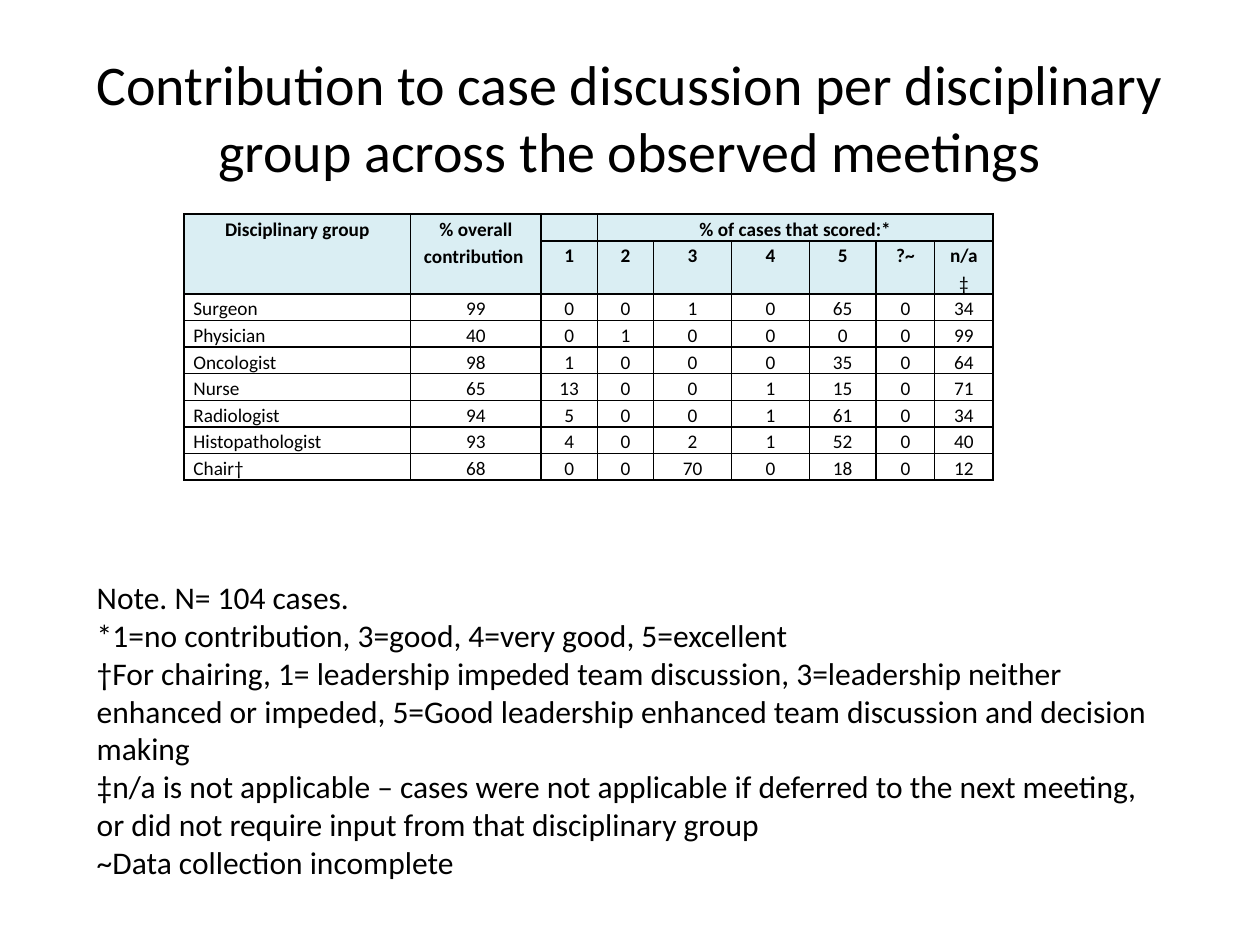
import lxml.etree
import pptx
import pptx.dml.color
import pptx.enum.text
import pptx.oxml.ns
import pptx.util

Pt = pptx.util.Pt
ALIGN = pptx.enum.text.PP_ALIGN
ANCHOR = pptx.enum.text.MSO_ANCHOR
qn = pptx.oxml.ns.qn

BLACK = pptx.dml.color.RGBColor(0x00, 0x00, 0x00)
HEADER_BLUE = pptx.dml.color.RGBColor(0xDA, 0xEE, 0xF3)

ROW_HEIGHT = 15.2
COLUMN_WIDTHS = [129.6, 74.5, 32.2, 32.2, 44.5, 44.5, 38.2, 33.4, 33.4]
CELL_FORMAT = {
    "margin_left": Pt(5.4),
    "margin_right": Pt(5.4),
    "margin_top": 0,
    "margin_bottom": 0,
}

HEADER = [
    ["Disciplinary group", "% overall contribution ", "", "% of cases that scored:*",
     "", "", "", "", ""],
    ["", "", "1", "2", "3", "4", "5", "?~", "n/a"],
]
SCORES = [
    ["Surgeon", 99, 0, 0, 1, 0, 65, 0, 34],
    ["Physician", 40, 0, 1, 0, 0, 0, 0, 99],
    ["Oncologist", 98, 1, 0, 0, 0, 35, 0, 64],
    ["Nurse", 65, 13, 0, 0, 1, 15, 0, 71],
    ["Radiologist", 94, 5, 0, 0, 1, 61, 0, 34],
    ["Histopathologist", 93, 4, 0, 2, 1, 52, 0, 40],
    ["Chair†", 68, 0, 0, 70, 0, 18, 0, 12],
]
NOTES = [
    "Note. N= 104 cases.",
    "*1=no contribution, 3=good, 4=very good, 5=excellent",
    "†For chairing, 1= leadership impeded team discussion, 3=leadership neither "
    "enhanced or impeded, 5=Good leadership enhanced team discussion and decision making",
    "‡n/a is not applicable – cases were not applicable if deferred to the next meeting, "
    "or did not require input from that disciplinary group",
    "~Data collection incomplete",
]


def add_run(paragraph, text, size, bold=False):
    run = paragraph.add_run()
    run.text = text
    font_format = {"name": "Calibri", "size": Pt(size), "bold": bold}
    for name, value in font_format.items():
        setattr(run.font, name, value)
    run.font.color.rgb = BLACK


def add_borders(cell):
    """Draw a 1 pt black line on all four sides; call before setting the fill."""
    properties = cell._tc.get_or_add_tcPr()
    for side in ("a:lnL", "a:lnR", "a:lnT", "a:lnB"):
        line = lxml.etree.SubElement(properties, qn(side), w=str(Pt(1)))
        fill = lxml.etree.SubElement(line, qn("a:solidFill"))
        lxml.etree.SubElement(fill, qn("a:srgbClr"), val=str(BLACK))


presentation = pptx.Presentation()
presentation.slide_width = Pt(720)
presentation.slide_height = Pt(540)
slide = presentation.slides.add_slide(presentation.slide_layouts[6])

# Title
title = slide.shapes.add_textbox(Pt(36), Pt(21.6), Pt(648), Pt(90)).text_frame
title.word_wrap = True
title.vertical_anchor = ANCHOR.MIDDLE
title.paragraphs[0].alignment = ALIGN.CENTER
add_run(title.paragraphs[0],
        "Contribution to case discussion per disciplinary group across the observed meetings", 32)

# Notes below the table
notes = slide.shapes.add_textbox(Pt(48.2), Pt(326.9), Pt(617.8), Pt(181.4)).text_frame
notes.word_wrap = True
for index, note in enumerate(NOTES):
    paragraph = notes.add_paragraph() if index else notes.paragraphs[0]
    add_run(paragraph, note, 18)

# Score table
rows = HEADER + SCORES
scores = slide.shapes.add_table(
    len(rows), len(COLUMN_WIDTHS), Pt(105.1), Pt(122.4),
    Pt(sum(COLUMN_WIDTHS)), Pt(ROW_HEIGHT * (len(rows) + 1))).table
scores.first_row = False
scores.horz_banding = False
for column, width in zip(scores.columns, COLUMN_WIDTHS):
    column.width = Pt(width)
for row in scores.rows:
    row.height = Pt(ROW_HEIGHT)
scores.rows[1].height = Pt(2 * ROW_HEIGHT)

for row_index, values in enumerate(rows):
    in_header = row_index < len(HEADER)
    for column_index, value in enumerate(values):
        cell = scores.cell(row_index, column_index)
        for name, setting in CELL_FORMAT.items():
            setattr(cell, name, setting)
        cell.vertical_anchor = ANCHOR.TOP if in_header else ANCHOR.MIDDLE
        add_borders(cell)
        if in_header:
            cell.fill.solid()
            cell.fill.fore_color.rgb = HEADER_BLUE
        else:
            cell.fill.background()

        paragraph = cell.text_frame.paragraphs[0]
        paragraph.line_spacing = 1.15
        paragraph.alignment = ALIGN.CENTER if in_header or column_index else ALIGN.LEFT
        if value != "":
            add_run(paragraph, str(value), 11, bold=in_header)
        if value == "n/a":
            add_run(paragraph, " ‡", 11)
        # Keeps empty cells from growing to the default text size
        lxml.etree.SubElement(paragraph._p, qn("a:endParaRPr"), sz="1100")

for first, last in (((0, 0), (1, 0)), ((0, 1), (1, 1)), ((0, 3), (0, 8))):
    scores.cell(*first).merge(scores.cell(*last))

presentation.save("out.pptx")
